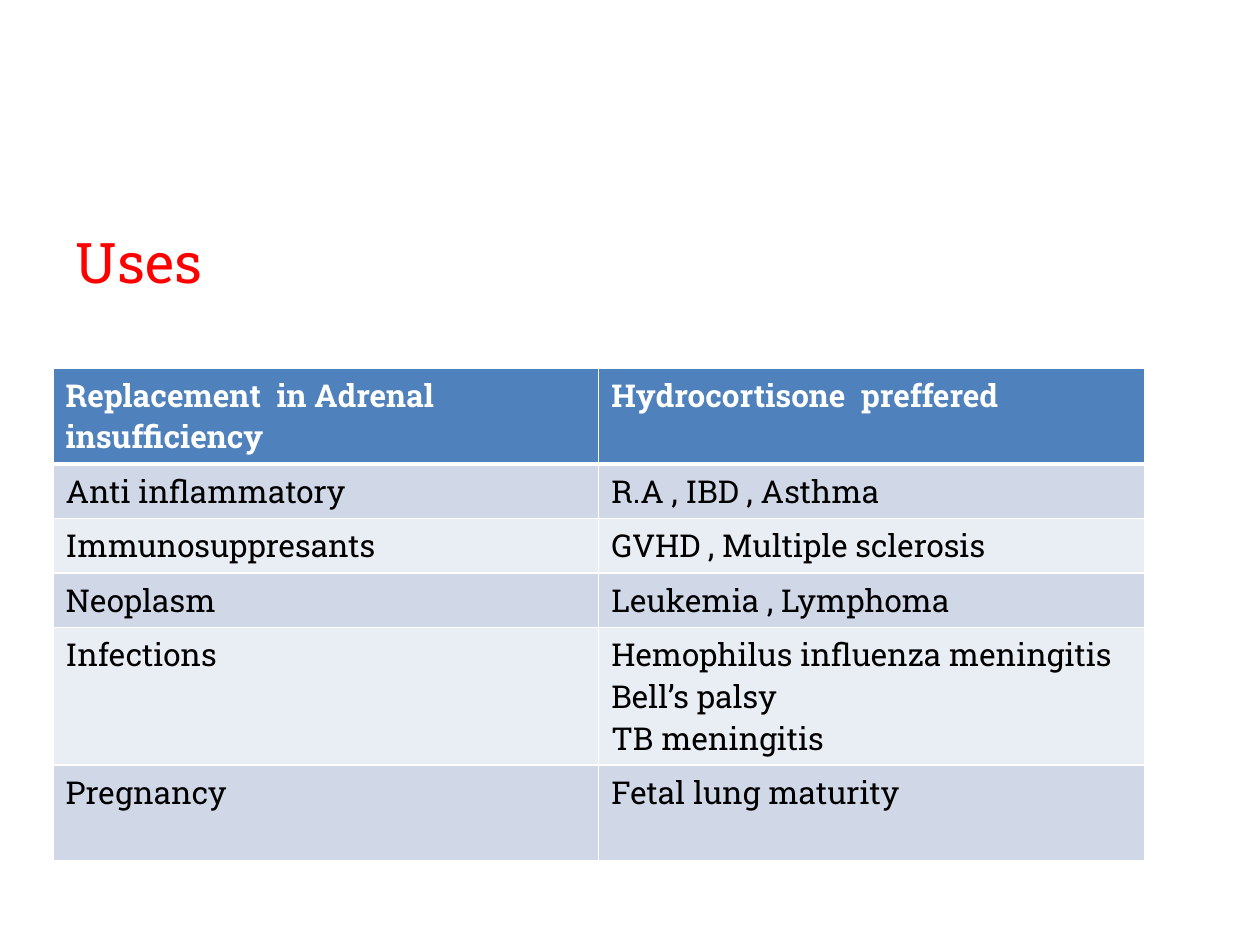
from lxml import etree
from pptx import Presentation
from pptx.dml.color import RGBColor
from pptx.oxml.ns import qn
from pptx.util import Cm, Pt

HEADING = "Uses"
ROWS = [
    ("Replacement  in Adrenal insufficiency", "Hydrocortisone  preffered"),
    ("Anti inflammatory", "R.A , IBD , Asthma"),
    ("Immunosuppresants", "GVHD , Multiple sclerosis"),
    ("Neoplasm", "Leukemia , Lymphoma"),
    ("Infections", "Hemophilus influenza meningitis\nBell’s palsy\nTB meningitis"),
    ("Pregnancy", "Fetal lung maturity"),
]
ROW_HEIGHTS = [1.91, 1.1, 1.1, 1.1, 2.77, 1.92]
COL_WIDTH = 11
THEME = {
    "font": "Roboto Slab",
    "heading_size": 32,
    "cell_size": 18,
    "heading": "FF0000",
    "header_fill": "4F81BD",
    "header_text": "FFFFFF",
    "text": "000000",
    "bands": ("D0D8E8", "E9EDF4"),
    "border": "FFFFFF",
}


def style(p, size, color, bold=False):
    p.font.name = THEME["font"]
    p.font.size = Pt(size)
    p.font.bold = bold
    p.font.color.rgb = RGBColor.from_string(color)


def set_borders(cell, bottom, top):
    pr = cell._tc.get_or_add_tcPr()
    widths = {"a:lnL": 1, "a:lnR": 1, "a:lnT": top, "a:lnB": bottom}
    for i, (tag, width) in enumerate(widths.items()):
        ln = etree.Element(qn(tag), w=str(Pt(width)))
        fill = etree.SubElement(ln, qn("a:solidFill"))
        etree.SubElement(fill, qn("a:srgbClr"), val=THEME["border"])
        pr.insert(i, ln)


def add_heading(s):
    title = s.shapes.title
    title.element.getparent().remove(title.element)
    body = s.placeholders[1]
    body.left, body.top, body.width, body.height = Cm(1.27), Cm(4.45), Cm(22.86), Cm(12.57)
    p = body.text_frame.paragraphs[0]
    p.text = HEADING
    style(p, THEME["heading_size"], THEME["heading"])
    pr = p._p.get_or_add_pPr()
    pr.set("marL", "0")
    pr.set("indent", "0")
    pr.insert(0, etree.Element(qn("a:buNone")))


def add_uses_table(s):
    table = s.shapes.add_table(len(ROWS), 2, Cm(1.07), Cm(7.42),
                               Cm(2 * COL_WIDTH), Cm(sum(ROW_HEIGHTS))).table
    for col in table.columns:
        col.width = Cm(COL_WIDTH)
    for i, (texts, height) in enumerate(zip(ROWS, ROW_HEIGHTS)):
        table.rows[i].height = Cm(height)
        header = i == 0
        fill = THEME["header_fill"] if header else THEME["bands"][(i - 1) % 2]
        color = THEME["header_text"] if header else THEME["text"]
        for j, text in enumerate(texts):
            cell = table.cell(i, j)
            cell.text = text
            cell.fill.solid()
            cell.fill.fore_color.rgb = RGBColor.from_string(fill)
            set_borders(cell, bottom=3 if header else 1, top=3 if i == 1 else 1)
            for p in cell.text_frame.paragraphs:
                style(p, THEME["cell_size"], color, header)


prs = Presentation()
prs.slide_width, prs.slide_height = Cm(25.4), Cm(19.05)
s = prs.slides.add_slide(prs.slide_layouts[1])
add_heading(s)
add_uses_table(s)
prs.save("out.pptx")
